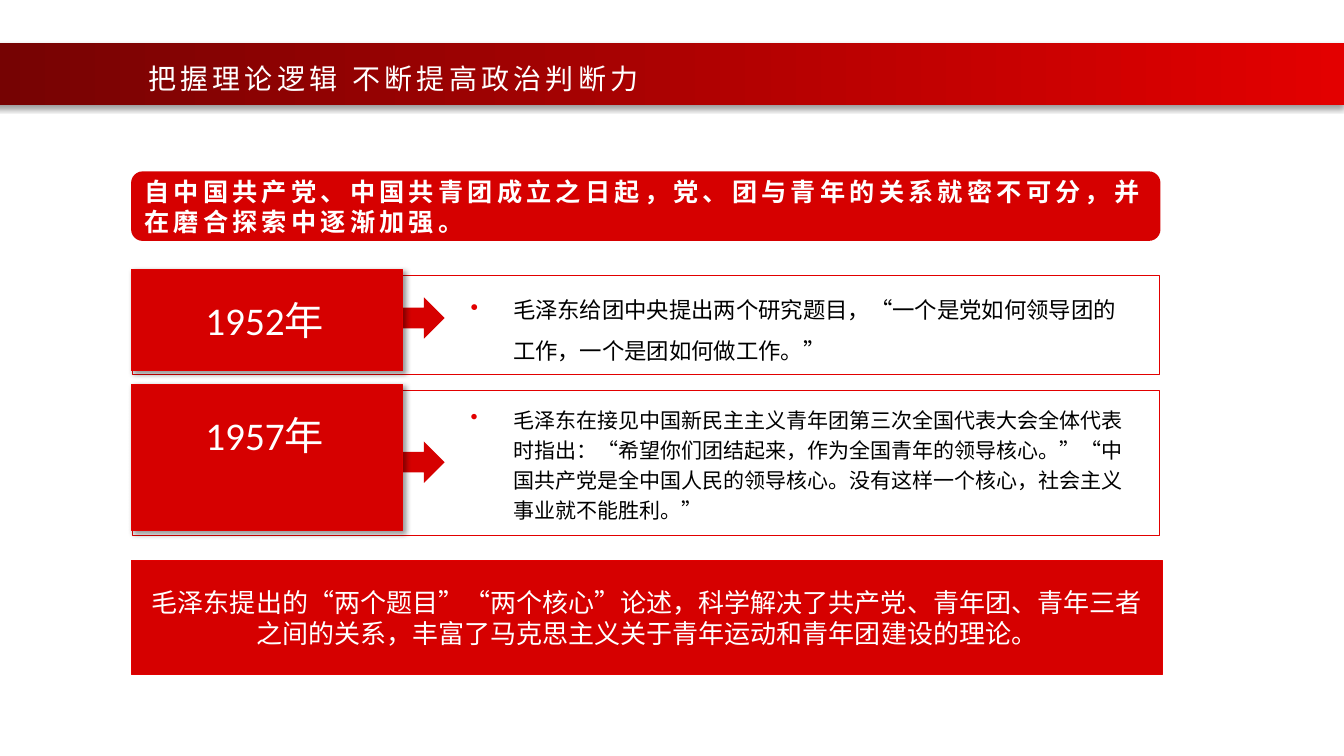
from dataclasses import dataclass

from lxml.etree import SubElement
from pptx import Presentation
from pptx.dml.color import RGBColor
from pptx.enum.shapes import MSO_SHAPE
from pptx.enum.text import MSO_ANCHOR, MSO_AUTO_SIZE, PP_ALIGN
from pptx.oxml.ns import qn
from pptx.util import Pt

PX = 9144  # EMU per px, 100 px to the inch


@dataclass(frozen=True)
class Theme:
    red: str = "D60000"
    outline: str = "E20000"
    band_bright: str = "E30000"
    band_dark: str = "760303"
    white: str = "FFFFFF"
    black: str = "000000"
    latin: str = "Calibri"
    chinese: str = "Noto Sans CJK SC"
    title: float = 20
    lead: float = 18
    year: float = 28
    summary: float = 18.6


@dataclass(frozen=True)
class Milestone:
    year: str
    quote: str
    size: float
    line_spacing: float
    frame: tuple  # top, height
    badge: tuple
    arrow_top: int
    quote_box: tuple


THEME = Theme()

MILESTONES = [
    Milestone(
        "1952年",
        "毛泽东给团中央提出两个研究题目，“一个是党如何领导团的工作，一个是团如何做工作。”",
        16, 1.5, (273, 99), (267, 101), 295, (276, 91)),
    Milestone(
        "1957年",
        "毛泽东在接见中国新民主主义青年团第三次全国代表大会全体代表时指出：“希望你们团结起来，"
        "作为全国青年的领导核心。”“中国共产党是全中国人民的领导核心。没有这样一个核心，"
        "社会主义事业就不能胜利。”",
        15, 1.2, (387, 144), (381, 145), 438, (394, 131)),
]


def rgb(color):
    return RGBColor.from_string(color)


def emu(*lengths):
    return [length * PX for length in lengths]


def add_shadow(shape, direction):
    """Give the shape a soft black shadow; direction is in degrees."""
    effects = shape._element.spPr.find(qn("a:effectLst"))
    shadow = SubElement(effects, qn("a:outerShdw"), blurRad=str(Pt(4)), dist=str(Pt(3)),
                        dir=str(direction * 60000), algn="t", rotWithShape="0")
    color = SubElement(shadow, qn("a:srgbClr"), val=THEME.black)
    SubElement(color, qn("a:alpha"), val="40000")


def add_box(slide, kind, left, top, width, height, fill=None, line=None):
    shape = slide.shapes.add_shape(kind, *emu(left, top, width, height))
    shape.shadow.inherit = False
    if fill:
        shape.fill.solid()
        shape.fill.fore_color.rgb = rgb(fill)
    else:
        shape.fill.background()
    if line:
        shape.line.color.rgb = rgb(line)
        shape.line.width = Pt(0.75)
    else:
        shape.line.fill.background()
    return shape


def add_bullet(paragraph, color, indent):
    properties = paragraph._p.get_or_add_pPr()
    properties.set("marL", str(indent * PX))
    properties.set("indent", str(-indent * PX))
    bullet_color = SubElement(properties, qn("a:buClr"))
    SubElement(bullet_color, qn("a:srgbClr"), val=color)
    SubElement(properties, qn("a:buChar"), char="•")


def set_text(shape, text, *, size, color=THEME.white, font=THEME.chinese, bold=False,
             align=PP_ALIGN.LEFT, anchor=MSO_ANCHOR.TOP, spacing=0, line_spacing=1.0,
             bullet=None, insets=(10, 5), grow=False):
    """Write one formatted paragraph; spacing is between letters, in points."""
    frame = shape.text_frame
    frame.word_wrap = True
    frame.auto_size = MSO_AUTO_SIZE.SHAPE_TO_FIT_TEXT if grow else MSO_AUTO_SIZE.NONE
    frame.vertical_anchor = anchor
    frame.margin_left = frame.margin_right = insets[0] * PX
    frame.margin_top = frame.margin_bottom = insets[1] * PX
    paragraph = frame.paragraphs[0]
    if bullet:
        add_bullet(paragraph, bullet, indent=42)
    paragraph.alignment = align
    paragraph.line_spacing = line_spacing
    paragraph.space_before = Pt(0)
    run = paragraph.add_run()
    run.text = text
    run.font.size = Pt(size)
    run.font.bold = bold
    run.font.color.rgb = rgb(color)
    run.font.name = font
    properties = run._r.get_or_add_rPr()
    SubElement(properties, qn("a:ea"), typeface=THEME.chinese)
    if spacing:
        properties.set("spc", str(spacing * 100))


def add_text(slide, text, left, top, width, height, **text_format):
    box = slide.shapes.add_textbox(*emu(left, top, width, height))
    set_text(box, text, grow=True, **text_format)


def add_header(slide, text):
    title = slide.shapes.title
    title.left, title.top, title.width, title.height = emu(137, 56, 585, 44)
    set_text(title, text, size=THEME.title, spacing=3, grow=True)

    band = add_box(slide, MSO_SHAPE.RECTANGLE, -5, 43, 1340, 61)
    band.fill.gradient()
    band.fill.gradient_angle = 180
    for stop, color in zip(band.fill.gradient_stops, (THEME.band_bright, THEME.band_dark)):
        stop.color.rgb = rgb(color)
    add_shadow(band, 135)
    title.element.addprevious(band.element)  # the band lies behind the title


def add_milestone(slide, milestone):
    frame_top, frame_height = milestone.frame
    badge_top, badge_height = milestone.badge
    quote_top, quote_height = milestone.quote_box
    add_box(slide, MSO_SHAPE.RECTANGLE, 131, frame_top, 1019, frame_height, line=THEME.outline)
    add_box(slide, MSO_SHAPE.RIGHT_ARROW, 390, milestone.arrow_top, 51, 41, fill=THEME.red)
    badge = add_box(slide, MSO_SHAPE.RECTANGLE, 130, badge_top, 269, badge_height,
                    fill=THEME.red, line=THEME.outline)
    add_shadow(badge, 45)
    add_text(slide, milestone.year, 143, badge_top + 22, 239, 57,
             size=THEME.year, font=THEME.latin, align=PP_ALIGN.CENTER)
    add_text(slide, milestone.quote, 457, quote_top, 673, quote_height,
             size=milestone.size, color=THEME.black,
             line_spacing=milestone.line_spacing, bullet=THEME.outline)


def main():
    presentation = Presentation()
    presentation.slide_width, presentation.slide_height = emu(1333, 750)
    slide = presentation.slides.add_slide(presentation.slide_layouts.get_by_name("Title Only"))

    add_header(slide, "把握理论逻辑 不断提高政治判断力")
    lead = add_box(slide, MSO_SHAPE.ROUNDED_RECTANGLE, 130, 170, 1021, 69, fill=THEME.red)
    set_text(lead, "自中国共产党、中国共青团成立之日起，党、团与青年的关系就密不可分，并在磨合探索中逐渐加强。",
             size=THEME.lead, bold=True, spacing=3, anchor=MSO_ANCHOR.MIDDLE)
    for milestone in MILESTONES:
        add_milestone(slide, milestone)
    summary = add_box(slide, MSO_SHAPE.RECTANGLE, 130, 556, 1023, 113,
                      fill=THEME.red, line=THEME.outline)
    set_text(summary,
             "毛泽东提出的“两个题目”“两个核心”论述，科学解决了共产党、青年团、青年三者之间的关系，"
             "丰富了马克思主义关于青年运动和青年团建设的理论。",
             size=THEME.summary, align=PP_ALIGN.CENTER, anchor=MSO_ANCHOR.MIDDLE, insets=(13, 7))

    presentation.save("out.pptx")


if __name__ == "__main__":
    main()
